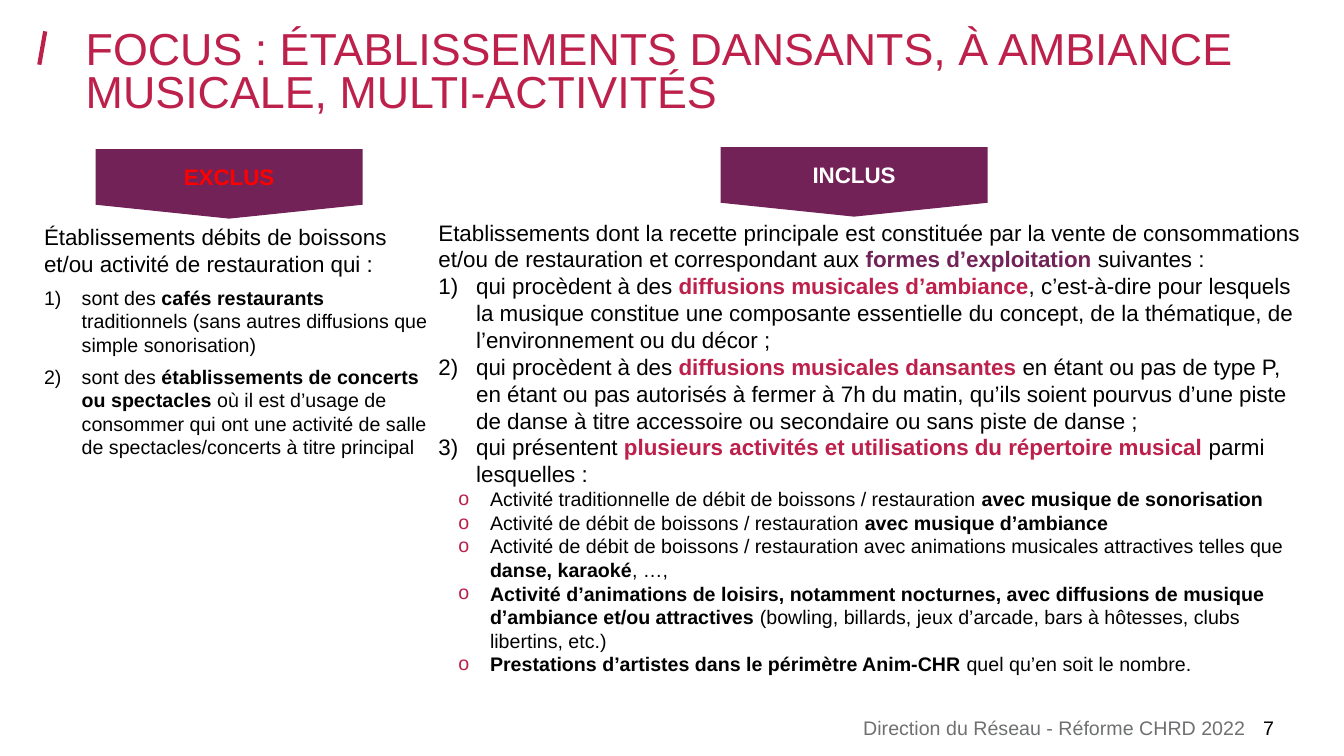
from lxml.etree import SubElement
from pptx import Presentation
from pptx.dml.color import RGBColor
from pptx.enum.shapes import MSO_CONNECTOR, MSO_SHAPE
from pptx.enum.text import MSO_ANCHOR, MSO_AUTO_SIZE, PP_ALIGN
from pptx.oxml.ns import qn
from pptx.util import Cm, Pt

CRIMSON = RGBColor(0xBC, 0x20, 0x4B)
PLUM = RGBColor(0x72, 0x22, 0x57)
RED = RGBColor(0xFF, 0x00, 0x00)
GREY = RGBColor(0x6F, 0x70, 0x72)
BLACK = RGBColor(0x00, 0x00, 0x00)
WHITE = RGBColor(0xFF, 0xFF, 0xFF)


class FocusSlide:
    font = "Arial"

    def __init__(self, deck):
        self.slide = deck.slides.add_slide(deck.slide_layouts[5])

    def run(self, paragraph, text, size, color=BLACK, bold=False):
        run = paragraph.add_run()
        run.text = text
        run.font.name = self.font
        run.font.size = Pt(size)
        run.font.bold = bold
        run.font.color.rgb = color

    def frame(self, shape, inset=0.0, anchor=MSO_ANCHOR.TOP):
        frame = shape.text_frame
        frame.word_wrap = True
        frame.auto_size = MSO_AUTO_SIZE.NONE
        frame.vertical_anchor = anchor
        frame.margin_left = frame.margin_right = Cm(inset)
        frame.margin_top = frame.margin_bottom = Cm(inset / 2)
        return frame

    def title(self, text, left, top, width, height):
        title = self.slide.shapes.title
        title.left, title.top = Cm(left), Cm(top)
        title.width, title.height = Cm(width), Cm(height)
        paragraph = self.frame(title).paragraphs[0]
        paragraph.alignment = PP_ALIGN.LEFT
        paragraph.line_spacing = 0.8
        self.run(paragraph, text, 32, CRIMSON)

    def line(self, start, end, color, weight):
        points = [Cm(value) for value in (*start, *end)]
        line = self.slide.shapes.add_connector(MSO_CONNECTOR.STRAIGHT, *points)
        line.line.color.rgb = color
        line.line.width = Pt(weight)
        SubElement(line._element.spPr, qn("a:effectLst"))

    def banner(self, text, left, top, color):
        banner = self.slide.shapes.add_shape(
            MSO_SHAPE.FLOWCHART_OFFPAGE_CONNECTOR,
            Cm(left), Cm(top), Cm(6.73), Cm(1.75))
        banner.shadow.inherit = False
        banner.fill.solid()
        banner.fill.fore_color.rgb = PLUM
        banner.line.fill.background()
        paragraph = self.frame(banner, 0.25, MSO_ANCHOR.MIDDLE).paragraphs[0]
        paragraph.alignment = PP_ALIGN.CENTER
        self.run(paragraph, text, 16, color, True)

    def bullet(self, paragraph, kind):
        properties = paragraph._p.get_or_add_pPr()
        indent, hanging = (0.95, 0.95) if kind == "number" else (1.3, 0.8)
        properties.set("marL", str(Cm(indent)))
        properties.set("indent", str(-Cm(hanging)))
        if kind == "number":
            SubElement(properties, qn("a:buFont"), typeface=self.font)
            SubElement(properties, qn("a:buAutoNum"), type="arabicParenR")
        else:
            paragraph.level = 4
            color = SubElement(properties, qn("a:buClr"))
            SubElement(color, qn("a:srgbClr"), val=str(CRIMSON))
            SubElement(properties, qn("a:buFont"), typeface=self.font)
            SubElement(properties, qn("a:buChar"), char="o")

    def text(self, paragraphs, left, top, width, height, inset=0.0,
             gap=0, align=PP_ALIGN.LEFT):
        """Each paragraph is (kind, size, runs); a run is (text, color, bold)."""
        box = self.slide.shapes.add_textbox(
            Cm(left), Cm(top), Cm(width), Cm(height))
        frame = self.frame(box, inset)
        for index, (kind, size, runs) in enumerate(paragraphs):
            paragraph = frame.add_paragraph() if index else frame.paragraphs[0]
            paragraph.alignment = align
            if kind != "plain":
                self.bullet(paragraph, kind)
            paragraph.space_before = Pt(gap if index else 0)
            for text, color, bold in runs:
                self.run(paragraph, text, size, color, bold)


def plain(text):
    return text, BLACK, False


def strong(text, color=BLACK):
    return text, color, True


EXCLUDED = [
    ("plain", 16, [plain("Établissements débits de boissons et/ou activité de "
                         "restauration qui :")]),
    ("number", 14, [plain("sont des "), strong("cafés restaurants "),
                    plain("traditionnels (sans autres diffusions que simple "
                          "sonorisation)")]),
    ("number", 14, [plain("sont des "),
                    strong("établissements de concerts ou spectacles "),
                    plain("où il est d’usage de consommer qui ont une activité "
                          "de salle de spectacles/concerts à titre principal")]),
]

INCLUDED = [
    ("plain", 16, [plain("Etablissements dont la recette principale est "
                         "constituée par la vente de consommations et/ou de "
                         "restauration et correspondant aux "),
                   strong("formes d’exploitation ", PLUM),
                   plain("suivantes :")]),
    ("number", 16, [plain("qui procèdent à des "),
                    strong("diffusions musicales d’ambiance", CRIMSON),
                    plain(", c’est-à-dire pour lesquels la musique constitue "
                          "une composante essentielle du concept, de la "
                          "thématique, de l’environnement ou du décor ;")]),
    ("number", 16, [plain("qui procèdent à des "),
                    strong("diffusions musicales dansantes ", CRIMSON),
                    plain("en étant ou pas de type P, en étant ou pas autorisés "
                          "à fermer à 7h du matin, qu’ils soient pourvus d’une "
                          "piste de danse à titre accessoire ou secondaire ou "
                          "sans piste de danse ;")]),
    ("number", 16, [plain("qui présentent "),
                    strong("plusieurs activités et utilisations du répertoire "
                           "musical ", CRIMSON),
                    plain("parmi lesquelles :")]),
    ("circle", 14, [plain("Activité traditionnelle de débit de boissons / "
                          "restauration "),
                    strong("avec musique de sonorisation")]),
    ("circle", 14, [plain("Activité de débit de boissons / restauration "),
                    strong("avec musique d’ambiance")]),
    ("circle", 14, [plain("Activité de débit de boissons / restauration avec "
                          "animations musicales attractives telles que "),
                    strong("danse, karaoké"), plain(", …,")]),
    ("circle", 14, [strong("Activité d’animations de loisirs, notamment "
                           "nocturnes, avec diffusions de musique d’ambiance "
                           "et/ou attractives "),
                    plain("(bowling, billards, jeux d’arcade, bars à hôtesses, "
                          "clubs libertins, etc.)")]),
    ("circle", 14, [strong("Prestations d’artistes dans le périmètre Anim-CHR "),
                    plain("quel qu’en soit le nombre.")]),
]


def main():
    deck = Presentation()
    deck.slide_width, deck.slide_height = Cm(33.87), Cm(19.05)
    focus = FocusSlide(deck)

    # Heading
    focus.line((0.99, 1.63), (1.14, 0.79), CRIMSON, 3)
    focus.title("FOCUS : ÉTABLISSEMENTS DANSANTS, À AMBIANCE MUSICALE, "
                "MULTI-ACTIVITÉS", 2.16, 0.79, 31.14, 1.93)

    # Footer
    focus.text([("plain", 14, [("Direction du Réseau - Réforme CHRD 2022",
                                GREY, False)])],
               18.39, 18.03, 13, 0.6, align=PP_ALIGN.RIGHT)
    focus.text([("plain", 14, [plain("7")])], 31.83, 18.03, 1.12, 0.6)

    # Included and excluded venues
    focus.text(INCLUDED, 11.05, 5.51, 21.95, 12.5)
    focus.text(EXCLUDED, 0.86, 5.51, 10.24, 9.7, inset=0.25, gap=6)
    focus.banner("EXCLUS", 2.41, 3.76, RED)
    focus.banner("INCLUS", 18.16, 3.71, WHITE)

    deck.save("out.pptx")


if __name__ == "__main__":
    main()
